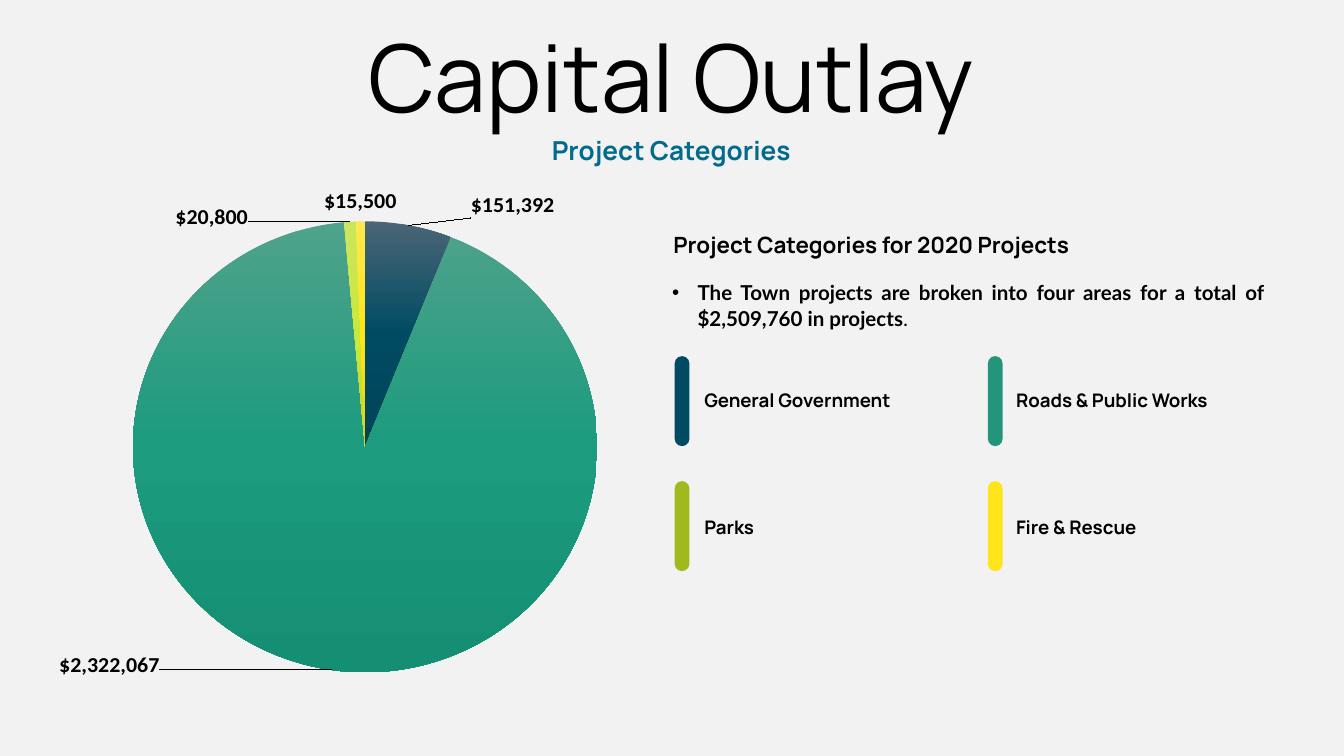
from copy import deepcopy
from dataclasses import dataclass

from pptx import Presentation
from pptx.chart.data import CategoryChartData
from pptx.dml.color import RGBColor
from pptx.enum.chart import XL_CHART_TYPE, XL_LABEL_POSITION
from pptx.enum.shapes import MSO_SHAPE
from pptx.enum.text import MSO_ANCHOR, MSO_AUTO_SIZE, PP_ALIGN
from pptx.oxml import parse_xml
from pptx.oxml.ns import nsdecls
from pptx.util import Inches, Pt


@dataclass(frozen=True)
class Theme:
    background: str = "F2F2F2"
    text: str = "000000"
    accent: str = "006B8B"
    heading_font: str = "Manrope"
    body_font: str = "Lato"
    chart_font: str = "Calibri"
    title: int = 50
    subtitle: int = 14
    heading: int = 12
    body: int = 11
    full_stop: int = 9
    legend: int = 10
    chart: int = 10
    label: int = 12


THEME = Theme()
MONEY = '"$"#,##0'

# name, value, legend colour, gradient colours, label shift from its default place
CATEGORIES = [
    ("General Government", 151392, "004B62", ("4B6576", "004B62", "004357"), (0.11, 0)),
    ("Roads & Public Works", 2322067, "22957B", ("4FA28B", "1C9B7E", "148F73"), (-0.31, -0.03)),
    ("Parks", 20800, "A0BA1E", ("CCE55F", "CAE839", "BAD72A"), (-0.25, 0.03)),
    ("Fire & Rescue", 15500, "FEE419", ("FFE74F", "FFE518", "E5CD13"), None),
]


def write(sp, box, runs, font, color=THEME.text, bold=True, align=PP_ALIGN.LEFT,
          anchor=MSO_ANCHOR.TOP, insets=(0, 0.08, 0, 0.08), spacing=0.9, before=7.5):
    """Place a text shape and fill its one paragraph with (text, size) runs."""
    sp.left, sp.top, sp.width, sp.height = map(Inches, box)
    tf = sp.text_frame
    sides = ("margin_left", "margin_top", "margin_right", "margin_bottom")
    frame = {"word_wrap": True, "auto_size": MSO_AUTO_SIZE.NONE, "vertical_anchor": anchor}
    frame.update(zip(sides, map(Inches, insets)))
    for name, value in frame.items():
        setattr(tf, name, value)
    p = tf.paragraphs[0]
    p.alignment, p.line_spacing, p.space_before = align, spacing, Pt(before)
    for text, size in runs:
        r = p.add_run()
        r.text = text
        for name, value in {"name": font, "size": Pt(size), "bold": bold}.items():
            setattr(r.font, name, value)
        r.font.color.rgb = RGBColor.from_string(color)
    return p


def manual_layout(**values):
    """Chart layout element; keyword order must follow the schema."""
    tags = "".join(f'<c:{tag} val="{value}"/>' for tag, value in values.items())
    return parse_xml(f'<c:layout {nsdecls("c")}><c:manualLayout>{tags}</c:manualLayout></c:layout>')


prs = Presentation()
prs.slide_width = Inches(10)
prs.slide_height = Inches(10 * 9 / 16)
s = prs.slides.add_slide(prs.slide_layouts[1])
s.background.fill.solid()
s.background.fill.fore_color.rgb = RGBColor.from_string(THEME.background)

# Headings
write(s.shapes.title, (2.04, 0.27, 5.91, 0.68), [("Capital Outlay", THEME.title)],
      THEME.heading_font, bold=False, align=PP_ALIGN.CENTER, anchor=MSO_ANCHOR.MIDDLE,
      insets=(0.1, 0.05, 0.1, 0.05), before=10)
write(s.shapes.add_textbox(0, 0, 0, 0), (3.5, 0.95, 2.99, 0.33),
      [("Project Categories", THEME.subtitle)], THEME.heading_font, THEME.accent,
      align=PP_ALIGN.CENTER)
write(s.shapes.add_textbox(0, 0, 0, 0), (5.01, 1.66, 4.48, 0.33),
      [("Project Categories for 2020 Projects", THEME.heading)], THEME.heading_font)

# Bulleted summary
p = write(s.placeholders[1], (5, 1.99, 4.49, 0.95),
          [("The Town projects are broken into four areas for a total of "
            "$2,509,760 in projects", THEME.body), (".", THEME.full_stop)],
          THEME.body_font, align=PP_ALIGN.JUSTIFY, insets=(0, 0.08, 0.08, 0.08), spacing=Pt(14))
pPr = p._p.get_or_add_pPr()
pPr.set("marL", str(Inches(0.19)))
pPr.set("indent", str(Inches(-0.19)))
pPr.append(parse_xml(f'<a:buFont {nsdecls("a")} typeface="Arial"/>'))
pPr.append(parse_xml(f'<a:buChar {nsdecls("a")} char="•"/>'))

# Pie chart
data = CategoryChartData(number_format=MONEY)
data.categories = [str(i + 1) for i in range(len(CATEGORIES))]
data.add_series("Series 1", [category[1] for category in CATEGORIES])
chart = s.shapes.add_chart(XL_CHART_TYPE.PIE, Inches(0.44), Inches(1.28),
                           Inches(4.18), Inches(3.95), data).chart
chart.has_title = chart.has_legend = False
chart.font.name, chart.font.size = THEME.chart_font, Pt(THEME.chart)
chart.font.color.rgb = RGBColor.from_string(THEME.text)
plot_area = chart._chartSpace.chart.plotArea
for layout in plot_area.xpath("./c:layout"):
    plot_area.remove(layout)
plot_area.insert(0, manual_layout(layoutTarget="inner", xMode="edge", yMode="edge",
                                  x=0.115, y=0.097, w=0.842, h=0.892))

series = chart.plots[0].series[0]
labels = series.data_labels
labels.show_value = True
labels.number_format, labels.number_format_is_linked = MONEY, False
labels.position = XL_LABEL_POSITION.OUTSIDE_END
label_fonts = [labels.font]
for i, (_, _, _, gradient, shift) in enumerate(CATEGORIES):
    point = series.points[i]
    fill = point.format.fill
    fill.gradient()
    fill.gradient_angle = 270
    stops = plot_area.xpath(".//a:gsLst")[-1]
    stops.append(deepcopy(stops[0]))
    for stop, position, color in zip(fill.gradient_stops, (0, 0.5, 1), gradient):
        stop.position, stop.color.rgb = position, RGBColor.from_string(color)
    if shift:
        label = point.data_label
        label.position = XL_LABEL_POSITION.OUTSIDE_END
        label_fonts.append(label.font)
        dLbl = plot_area.xpath(f".//c:dLbl[c:idx/@val='{i}']")[0]
        dLbl.insert(1, manual_layout(x=shift[0], y=shift[1]))
for font in label_fonts:
    for name, value in {"name": THEME.chart_font, "size": Pt(THEME.label), "bold": True}.items():
        setattr(font, name, value)
    font.color.rgb = RGBColor.from_string(THEME.text)

# Legend: two columns by two rows
for i, (name, _, color, _, _) in enumerate(CATEGORIES):
    row, col = divmod(i, 2)
    bar = s.shapes.add_shape(MSO_SHAPE.ROUNDED_RECTANGLE, Inches(5.02 + 2.33 * col),
                             Inches(2.65 + 0.93 * row), Inches(0.11), Inches(0.67))
    bar.adjustments[0] = 0.5
    bar.shadow.inherit = False
    bar.fill.solid()
    bar.fill.fore_color.rgb = RGBColor.from_string(color)
    bar.line.fill.background()
    write(s.shapes.add_textbox(0, 0, 0, 0), (5.24 + 2.32 * col, 2.83 + 0.95 * row, 1.71, 0.33),
          [(name, THEME.legend)], THEME.heading_font)

prs.save("out.pptx")
